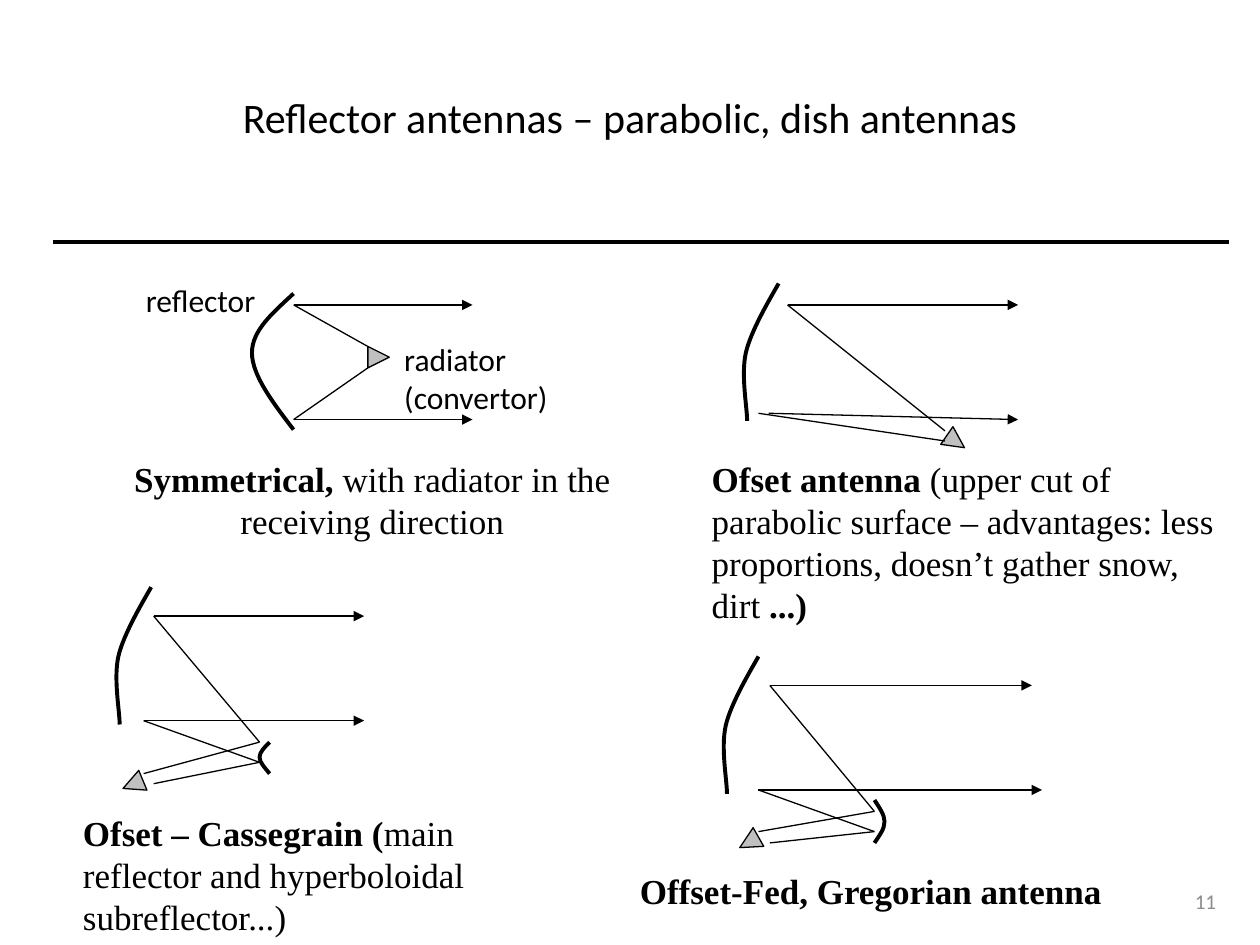
from itertools import pairwise

from lxml.etree import SubElement
from pptx import Presentation
from pptx.dml.color import RGBColor
from pptx.enum.shapes import MSO_CONNECTOR as Connector
from pptx.enum.text import MSO_ANCHOR as Anchor, PP_ALIGN as Align
from pptx.oxml.ns import qn
from pptx.util import Inches, Pt

BLACK = RGBColor(0x00, 0x00, 0x00)
GRAY = RGBColor(0x8C, 0x8C, 0x8C)
SILVER = RGBColor(0xC0, 0xC0, 0xC0)
SANS, SERIF = "Calibri", "Times New Roman"
THIN, THICK = 0.75, 2.25

# Curves: a start point, then three Bezier points per segment
DISH = [(0.33, 0), (0.17, 0.15), (0, 0.29), (0, 0.47),
        (0, 0.65), (0.17, 0.87), (0.33, 1.08)]
OFFSET_DISH = [(0.3, 0), (0.25, 0.09), (0.08, 0.37), (0.04, 0.55),
               (0, 0.73), (0.05, 0.98), (0.05, 1.09)]
HYPERBOLOID = [(0.08, 0), (0.04, 0.04), (0, 0.08), (0, 0.12),
               (0, 0.16), (0.04, 0.2), (0.08, 0.25)]
ELLIPSOID = [(0, 0), (0.04, 0.06), (0.08, 0.12), (0.08, 0.17),
             (0.08, 0.23), (0.04, 0.28), (0, 0.34)]
RADIATOR = [(0, 0), (0.17, 0.085), (0, 0.17)]

# Each antenna: reflectors (curve, left, top), radiator (left, top, rotation),
# and rays, each a chain of points
ANTENNAS = {
    "symmetrical": {
        "reflectors": [(DISH, 2, 2.33)],
        "radiator": (2.92, 2.75, 0),
        "rays": [[(2.92, 2.75), (2.33, 2.42), (3.75, 2.42)],
                 [(2.92, 2.92), (2.33, 3.33), (3.75, 3.33)]],
    },
    "offset": {
        "reflectors": [(OFFSET_DISH, 5.88, 2.25)],
        "radiator": (7.5, 3.42, 34.7),
        "rays": [[(7.5, 3.42), (6.25, 2.42), (8.08, 2.42)],
                 [(7.5, 3.5), (6.02, 3.28)],
                 [(6.1, 3.28), (8.08, 3.33)]],
    },
    "cassegrain": {
        "reflectors": [(OFFSET_DISH, 0.9, 4.66), (HYPERBOLOID, 2.06, 5.89)],
        "radiator": (0.97, 6.14, 157.5),
        "rays": [[(1.22, 6.22), (2.06, 6.05), (1.14, 5.72), (2.89, 5.72)],
                 [(1.14, 6.14), (2.06, 5.89), (1.22, 4.89), (2.89, 4.89)]],
    },
    "gregorian": {
        "reflectors": [(OFFSET_DISH, 5.72, 5.21), (ELLIPSOID, 6.94, 6.35)],
        "radiator": (5.86, 6.6, 150.3),
        "rays": [[(6.11, 6.69), (6.94, 6.6), (6.02, 6.27), (8.27, 6.27)],
                 [(6.02, 6.6), (6.94, 6.44), (6.11, 5.44), (8.19, 5.44)]],
    },
}

# Texts: box, runs (text, bold), font, size, colour, alignment, anchor
TEXTS = [
    ((0.5, 0.3, 9, 1.25),
     [("Reflector antennas – parabolic, dish antennas", False)],
     SANS, 24, BLACK, Align.CENTER, Anchor.MIDDLE),
    ((7.17, 6.95, 2.58, 0.4), [("11", False)],
     SANS, 12, GRAY, Align.RIGHT, Anchor.MIDDLE),
    ((1.06, 2.18, 1.42, 0.4), [("reflector", False)],
     SANS, 18, BLACK, Align.LEFT, Anchor.TOP),
    ((3.11, 2.65, 1.42, 0.71), [("radiator (convertor)", False)],
     SANS, 18, BLACK, Align.LEFT, Anchor.TOP),
    ((0.67, 3.58, 4.57, 0.77),
     [("Symmetrical, ", True),
      ("with radiator in the receiving direction", False)],
     SERIF, 20, BLACK, Align.CENTER, Anchor.TOP),
    ((5.55, 3.58, 4.45, 1.45),
     [("Ofset antenna ", True),
      ("(upper cut of parabolic surface – advantages: less proportions, "
       "doesn’t gather snow, dirt", False),
      (" ...)", True)],
     SERIF, 20, BLACK, Align.LEFT, Anchor.TOP),
    ((0.56, 6.39, 3.73, 1.11),
     [("Ofset – Cassegrain (", True),
      ("main reflector and hyperboloidal subreflector...)", False)],
     SERIF, 20, BLACK, Align.LEFT, Anchor.TOP),
    ((4.98, 6.85, 4, 0.44), [("Offset-Fed, Gregorian antenna", True)],
     SERIF, 20, BLACK, Align.LEFT, Anchor.TOP),
]


def set_line(shape, width):
    shape.line.color.rgb = BLACK
    shape.line.width = Pt(width)


def add_line(shapes, start, end, width, arrow=False):
    line = shapes.add_connector(Connector.STRAIGHT,
                                *map(Inches, (*start, *end)))
    set_line(line, width)
    if arrow:
        SubElement(line.line._get_or_add_ln(), qn("a:tailEnd"), type="triangle")
    SubElement(line._element.spPr, qn("a:effectLst"))


def add_outline(shapes, points, left, top, closed, width):
    start, *rest = [(Inches(left + x), Inches(top + y)) for x, y in points]
    builder = shapes.build_freeform(*start)
    builder.add_line_segments(rest, close=closed)
    outline = builder.convert_to_shape()
    outline.shadow.inherit = False
    set_line(outline, width)
    return outline


def add_reflector(shapes, curve, left, top):
    reflector = add_outline(shapes, curve, left, top, False, THICK)
    reflector.fill.background()
    # Merge every three straight segments into one Bezier segment
    segments = list(reflector._element.iter(qn("a:lnTo")))
    for first in range(0, len(segments), 3):
        bezier = SubElement(segments[0].getparent(), qn("a:cubicBezTo"))
        for segment in segments[first:first + 3]:
            bezier.append(segment[0])
    for segment in segments:
        segment.getparent().remove(segment)


def add_radiator(shapes, left, top, rotation):
    radiator = add_outline(shapes, RADIATOR, left, top, True, THIN)
    radiator.fill.solid()
    radiator.fill.fore_color.rgb = SILVER
    radiator.rotation = rotation


def add_ray(shapes, points):
    legs = list(pairwise(points))
    for leg in legs:
        # The outgoing leg runs to the right and carries the arrowhead
        outgoing = leg is legs[-1] and leg[1][0] > leg[0][0]
        add_line(shapes, *leg, THIN, outgoing)


def add_text(shapes, box, runs, font, size, color, align, anchor):
    frame = shapes.add_textbox(*map(Inches, box)).text_frame
    frame.word_wrap = True
    frame.vertical_anchor = anchor
    paragraph = frame.paragraphs[0]
    paragraph.alignment = align
    for text, bold in runs:
        run = paragraph.add_run()
        run.text = text
        run.font.name = font
        run.font.size = Pt(size)
        run.font.bold = bold
        run.font.color.rgb = color


def main():
    deck = Presentation()
    deck.slide_width, deck.slide_height = Inches(10), Inches(7.5)
    shapes = deck.slides.add_slide(deck.slide_layouts[6]).shapes

    # Rule under the title
    add_line(shapes, (0.42, 1.92), (9.75, 1.92), THICK)

    # Antenna diagrams
    for antenna in ANTENNAS.values():
        for reflector in antenna["reflectors"]:
            add_reflector(shapes, *reflector)
        add_radiator(shapes, *antenna["radiator"])
        for ray in antenna["rays"]:
            add_ray(shapes, ray)

    # Title, labels, captions and slide number
    for text in TEXTS:
        add_text(shapes, *text)

    deck.save("out.pptx")


if __name__ == "__main__":
    main()
